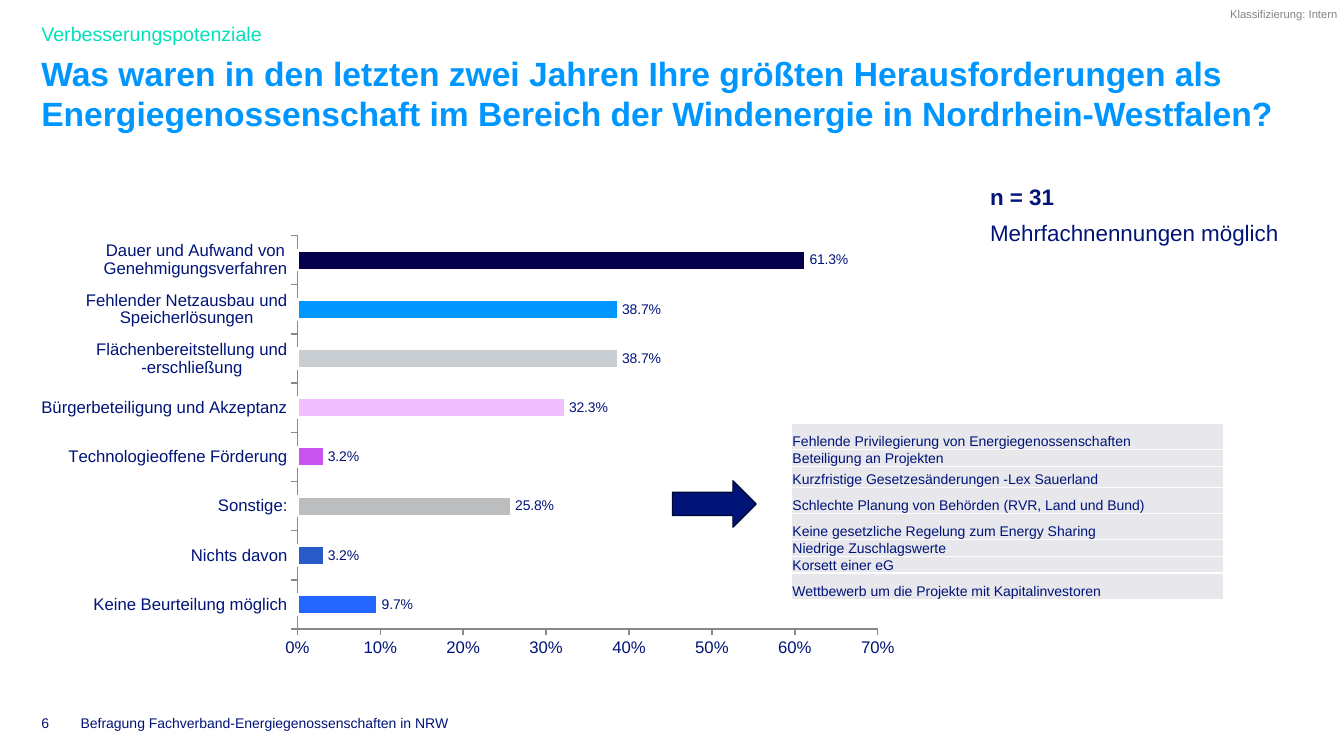
from lxml.etree import SubElement
from pptx import Presentation
from pptx.chart.data import CategoryChartData
from pptx.dml.color import RGBColor
from pptx.enum.chart import XL_CHART_TYPE, XL_LABEL_POSITION, XL_TICK_LABEL_POSITION, XL_TICK_MARK
from pptx.enum.shapes import MSO_SHAPE
from pptx.enum.text import MSO_ANCHOR, MSO_AUTO_SIZE, PP_ALIGN
from pptx.oxml import parse_xml
from pptx.oxml.ns import nsdecls, qn
from pptx.util import Inches, Pt

COLORS = {
    "navy": "001478", "azure": "0096FF", "mint": "00E1B9", "note": "838383",
    "axis": "888888", "cell": "E7E7EC", "white": "FFFFFF", "arrow_line": "000935",
}

CHALLENGES = [
    ("Keine Beurteilung möglich", 0.097, "2365FF"),
    ("Nichts davon", 0.032, "285AC8"),
    ("Sonstige:", 0.258, "BCBDBF"),
    ("Technologieoffene Förderung", 0.032, "C955F1"),
    ("Bürgerbeteiligung und Akzeptanz", 0.323, "F1BEFF"),
    ("Flächenbereitstellung und -erschließung", 0.387, "C8CED2"),
    ("Fehlender Netzausbau und Speicherlösungen", 0.387, "0096FF"),
    ("Dauer und Aufwand von Genehmigungsverfahren", 0.613, "05004B"),
]

OTHER_ANSWERS = [
    ("Fehlende Privilegierung von Energiegenossenschaften", 0.26),
    ("Beteiligung an Projekten", 0.11),
    ("Kurzfristige Gesetzesänderungen -Lex Sauerland", 0.21),
    ("Schlechte Planung von Behörden (RVR, Land und Bund)", 0.26),
    ("Keine gesetzliche Regelung zum Energy Sharing", 0.26),
    ("Niedrige Zuschlagswerte", 0.16),
    ("Korsett einer eG", 0.11),
    ("Wettbewerb um die Projekte mit Kapitalinvestoren", 0.26),
]


def color(name):
    return RGBColor.from_string(COLORS.get(name, name))


def inches(box):
    return [Inches(length) for length in box]


class SlideBuilder:
    font_name = "Arial"

    def __init__(self, slide):
        self.slide = slide

    def style_font(self, font, size, color_name="navy", bold=False):
        font.name = self.font_name
        font.size = Pt(size)
        font.bold = bold
        font.color.rgb = color(color_name)

    def fill_frame(self, frame, lines, size, color_name, anchor, wrap, space_before=0):
        frame.auto_size = MSO_AUTO_SIZE.NONE
        frame.word_wrap = wrap
        frame.vertical_anchor = anchor
        frame.margin_left = frame.margin_right = frame.margin_top = frame.margin_bottom = 0
        for index, (text, bold) in enumerate(lines):
            paragraph = frame.add_paragraph() if index else frame.paragraphs[0]
            paragraph.text = text
            paragraph.alignment = PP_ALIGN.LEFT
            paragraph.space_before = Pt(space_before if index else 0)
            self.style_font(paragraph.font, size, color_name, bold)

    def placeholder(self, shape, box, text, size, color_name, bold=False, anchor=MSO_ANCHOR.TOP):
        shape.left, shape.top, shape.width, shape.height = inches(box)
        properties = shape.text_frame.paragraphs[0]._p.get_or_add_pPr()
        properties.set("marL", "0")
        properties.set("indent", "0")
        SubElement(properties, qn("a:buNone"))
        self.fill_frame(shape.text_frame, [(text, bold)], size, color_name, anchor, True)

    def text(self, box, lines, size, color_name="navy", anchor=MSO_ANCHOR.TOP, wrap=False, space_before=0):
        frame = self.slide.shapes.add_textbox(*inches(box)).text_frame
        self.fill_frame(frame, lines, size, color_name, anchor, wrap, space_before)

    def style_axis(self, axis):
        axis.has_major_gridlines = False
        axis.major_tick_mark = XL_TICK_MARK.OUTSIDE
        axis.minor_tick_mark = XL_TICK_MARK.NONE
        axis.tick_label_position = XL_TICK_LABEL_POSITION.LOW
        axis.format.line.color.rgb = color("axis")
        axis.format.line.width = Pt(1)
        self.style_font(axis.tick_labels.font, 12)

    def bar_chart(self, box, rows, plot_layout):
        data = CategoryChartData()
        data.categories = [label for label, value, fill in rows]
        data.add_series("Series 1", [value for label, value, fill in rows])
        chart = self.slide.shapes.add_chart(XL_CHART_TYPE.BAR_CLUSTERED, *inches(box), data).chart
        chart.has_legend = False
        chart.has_title = False
        self.style_font(chart.font, 10)
        self.style_axis(chart.category_axis)
        self.style_axis(chart.value_axis)
        chart.value_axis.minimum_scale = 0
        chart.value_axis.maximum_scale = 0.7
        chart.value_axis.major_unit = 0.1
        chart.value_axis.tick_labels.number_format = "0%"
        chart.value_axis.tick_labels.number_format_is_linked = False

        plot = chart.plots[0]
        plot.gap_width = 150
        plot.vary_by_categories = False
        series = plot.series[0]
        for index, (label, value, fill) in enumerate(rows):
            bar = series.points[index].format
            bar.fill.solid()
            bar.fill.fore_color.rgb = color(fill)
            bar.line.color.rgb = color("white")
            bar.line.width = Pt(2)
        labels = series.data_labels
        labels.show_value = True
        labels.number_format = "#0.0%"
        labels.number_format_is_linked = False
        labels.position = XL_LABEL_POSITION.OUTSIDE_END
        self.style_font(labels.font, 10)

        plot_area = plot._element.getparent()
        for layout in plot_area.findall(qn("c:layout")):
            plot_area.remove(layout)
        settings = {"layoutTarget": "inner", "xMode": "edge", "yMode": "edge", **plot_layout}
        entries = "".join(f'<c:{name} val="{value}"/>' for name, value in settings.items())
        plot_area.insert(0, parse_xml(
            f'<c:layout {nsdecls("c")}><c:manualLayout>{entries}</c:manualLayout></c:layout>'))

    def table(self, box, rows):
        table = self.slide.shapes.add_table(len(rows), 1, *inches(box)).table
        table.first_row = False
        table.horz_banding = False
        for index, (text, height) in enumerate(rows):
            table.rows[index].height = Inches(height)
            cell = table.cell(index, 0)
            cell.text = text
            cell.vertical_anchor = MSO_ANCHOR.BOTTOM
            cell.margin_left = cell.margin_right = cell.margin_top = Inches(0.01)
            cell.margin_bottom = 0
            self.style_font(cell.text_frame.paragraphs[0].font, 10)
            properties = cell._tc.get_or_add_tcPr()
            for side in ("lnL", "lnR", "lnT", "lnB"):
                border = SubElement(properties, qn(f"a:{side}"), w=str(Pt(1)))
                fill = SubElement(border, qn("a:solidFill"))
                SubElement(fill, qn("a:srgbClr"), val=COLORS["white"])
            cell.fill.solid()
            cell.fill.fore_color.rgb = color("cell")

    def arrow(self, box):
        shape = self.slide.shapes.add_shape(MSO_SHAPE.RIGHT_ARROW, *inches(box))
        shape.shadow.inherit = False
        shape.fill.solid()
        shape.fill.fore_color.rgb = color("navy")
        shape.line.color.rgb = color("arrow_line")
        shape.line.width = Pt(1)


def main():
    presentation = Presentation()
    presentation.slide_width, presentation.slide_height = inches((13.33, 7.5))
    slide = presentation.slides.add_slide(presentation.slide_layouts[1])
    builder = SlideBuilder(slide)

    builder.placeholder(
        slide.shapes.title, (0.41, 0.52, 12.52, 0.87),
        "Was waren in den letzten zwei Jahren Ihre größten Herausforderungen als "
        "Energiegenossenschaft im Bereich der Windenergie in Nordrhein-Westfalen?",
        24, "azure", bold=True)
    builder.placeholder(
        slide.placeholders[1], (0.41, 0.17, 8.23, 0.28),
        "Verbesserungspotenziale", 14, "mint", anchor=MSO_ANCHOR.BOTTOM)
    builder.text((12.2, 0.07, 1.13, 0.13), [("Klassifizierung: Intern", False)], 8, "note")
    builder.text(
        (9.82, 1.82, 3.11, 0.87),
        [("n = 31", True), ("Mehrfachnennungen möglich", False)], 16, wrap=True, space_before=6)
    builder.bar_chart((0.41, 2.25, 8.64, 4.34), CHALLENGES, {"x": 0.29, "y": 0.02, "w": 0.67, "h": 0.9})
    builder.table((7.85, 4.2, 4.29, 1.63), OTHER_ANSWERS)
    builder.arrow((6.67, 4.77, 0.83, 0.46))
    builder.text((0.41, 7.1, 0.24, 0.16), [("6", False)], 10, anchor=MSO_ANCHOR.BOTTOM)
    builder.text(
        (0.8, 7.1, 5.63, 0.16),
        [("Befragung Fachverband-Energiegenossenschaften in NRW", False)], 10, anchor=MSO_ANCHOR.BOTTOM)
    presentation.save("out.pptx")


if __name__ == "__main__":
    main()
